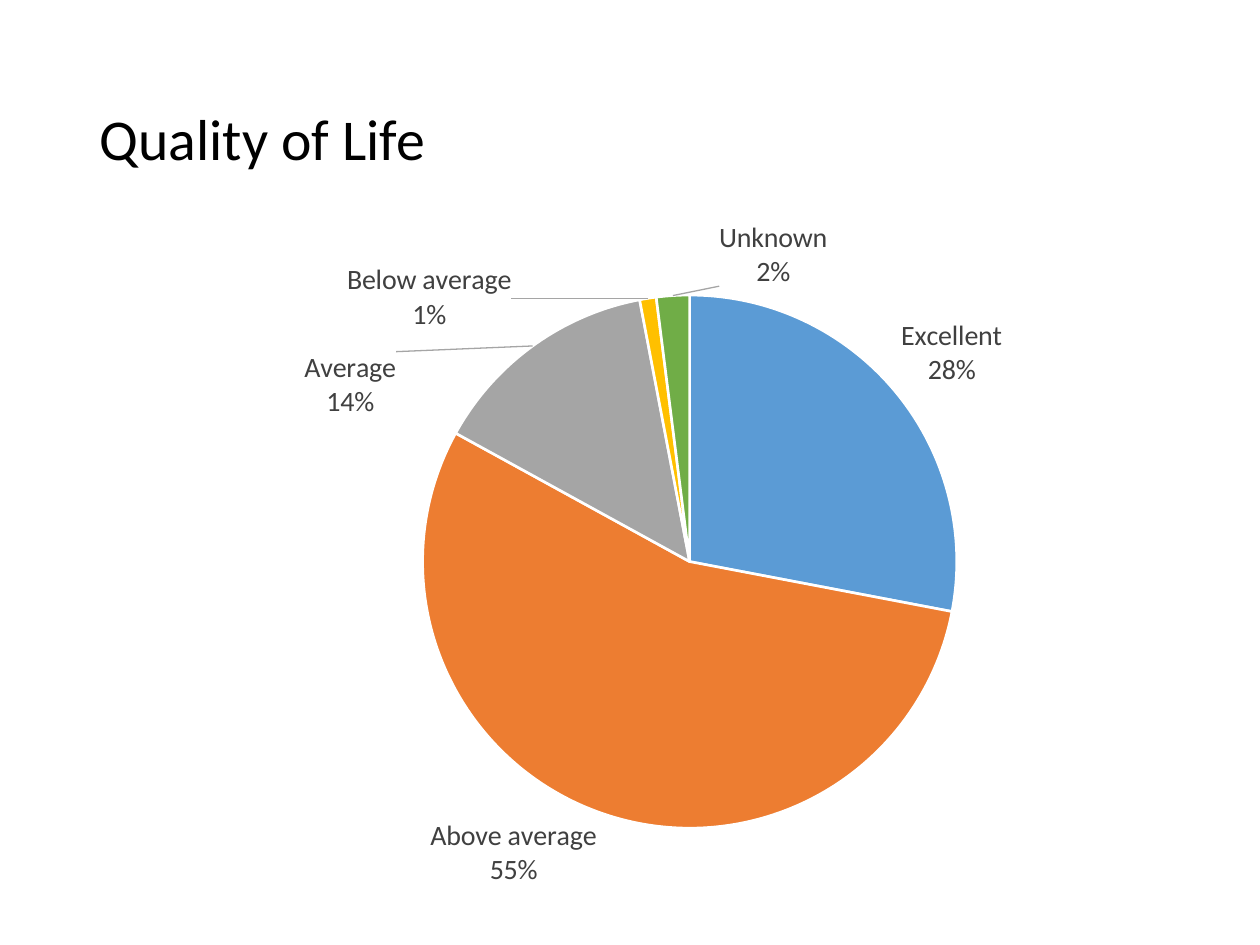
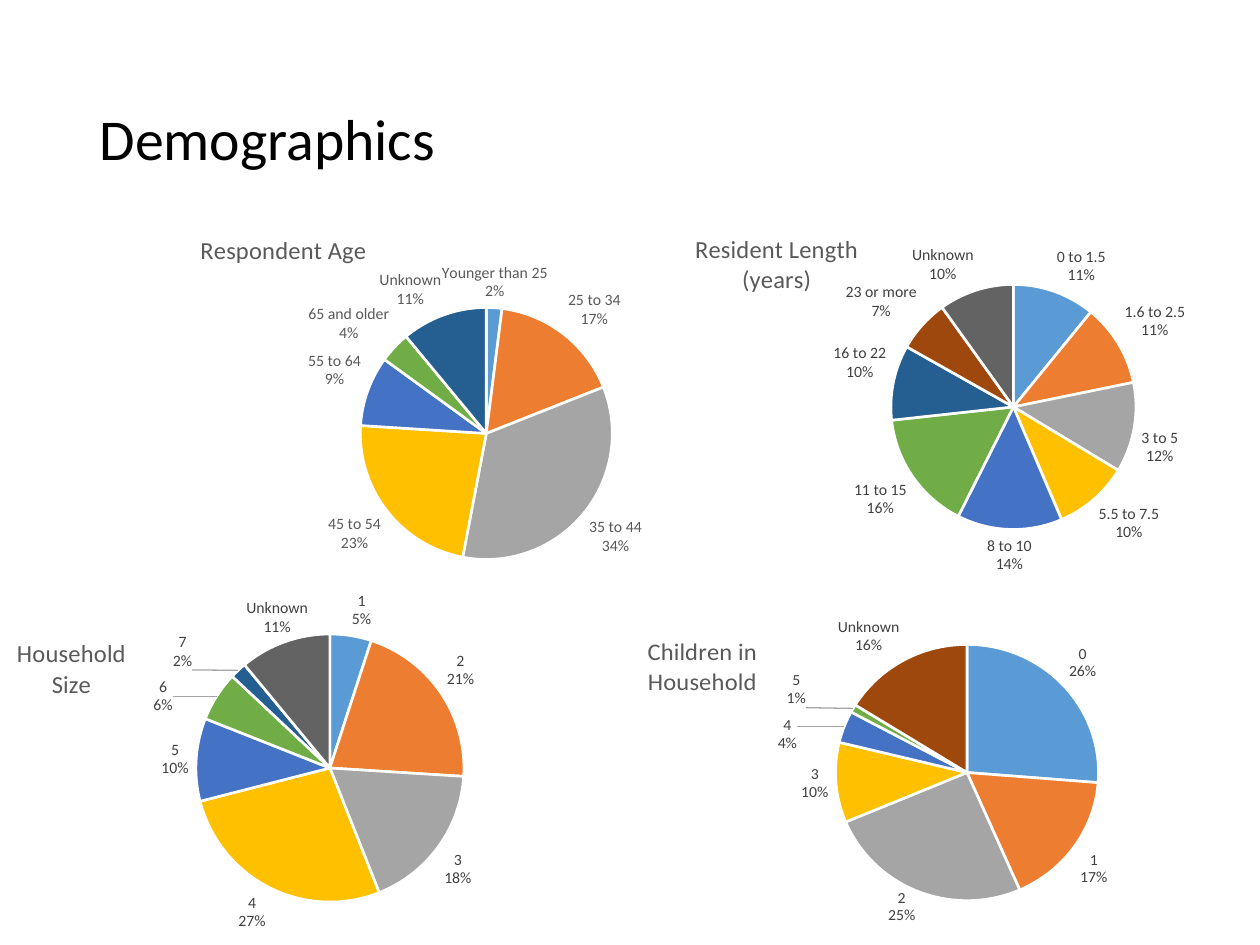
import copy

import pptx
import pptx.chart.data
import pptx.dml.color
import pptx.enum.chart
import pptx.enum.text
import pptx.oxml
import pptx.oxml.ns
import pptx.util
from lxml import etree

PX_PER_INCH = 126
SLIDE_SIZE = (1260, 945)
TITLE_BOX = (87, 50, 1086, 183)
FONT = "Calibri"

RGB = pptx.dml.color.RGBColor
BLACK = RGB(0x00, 0x00, 0x00)
WHITE = RGB(0xFF, 0xFF, 0xFF)
DARK_GREY = RGB(0x40, 0x40, 0x40)
MID_GREY = RGB(0x59, 0x59, 0x59)
LEADER_GREY = RGB(0xA5, 0xA5, 0xA5)
SLICES = [
    RGB(0x5B, 0x9B, 0xD5),
    RGB(0xED, 0x7D, 0x31),
    RGB(0xA5, 0xA5, 0xA5),
    RGB(0xFF, 0xC0, 0x00),
    RGB(0x44, 0x72, 0xC4),
    RGB(0x70, 0xAD, 0x47),
    RGB(0x25, 0x5E, 0x91),
    RGB(0x9E, 0x48, 0x0E),
    RGB(0x63, 0x63, 0x63),
]

# Boxes and heading positions are in px; a heading position and the label
# shifts are measured inside the chart box. A plot is a share of its box.
QUALITY = dict(
    box=(168, 220, 1018, 672),
    plot=(0.25, 0.11, 0.525, 0.795),
    shares={"Excellent": 28, "Above average": 55, "Average": 14,
            "Below average": 1, "Poor": 0, "Unknown": 2},
    shifts={2: (-132, 80), 3: (-135, 41), 4: (0, -3), 5: (101, -2)},
    label_size=16,
)
DEMOGRAPHICS = [
    dict(
        box=(126, 199, 630, 378),
        plot=(0.372, 0.287, 0.4, 0.667),
        shares={"Younger than 25": 2, "25 to 34": 17, "35 to 44": 34,
                "45 to 54": 23, "55 to 64": 9, "65 and older": 4,
                "Unknown": 11},
        heading=["Respondent Age"],
        heading_at=(70, 29),
        label_color=MID_GREY,
    ),
    dict(
        box=(661, 202, 630, 378),
        plot=(0.365, 0.218, 0.389, 0.649),
        shares={"0 to 1.5": 11, "1.6 to 2.5": 11, "3 to 5": 12,
                "5.5 to 7.5": 10, "8 to 10": 14, "11 to 15": 16,
                "16 to 22": 10, "23 or more": 7, "Unknown": 10},
        heading=["Resident Length", "(years)"],
        heading_at=(30, 26),
    ),
    dict(
        box=(-42, 583, 620, 357),
        plot=(0.375, 0.143, 0.45, 0.751),
        shares={"1": 5, "2": 21, "3": 18, "4": 27, "5": 10, "6": 6,
                "7": 2, "8": 0, "Unknown": 11},
        heading=["Household", "Size"],
        heading_at=(55, 50),
        shifts={5: (-38, 22), 6: (-41, 5), 7: (-11, -15), 8: (26, 1)},
    ),
    dict(
        box=(567, 577, 609, 357),
        plot=(0.436, 0.194, 0.442, 0.737),
        shares={"0": 26, "1": 17, "2": 25, "3": 10, "4": 4, "5": 1,
                "6": 0, "Unknown": 16},
        heading=["Children in", "Household"],
        heading_at=(77, 56),
        shifts={4: (-40, 29), 5: (-41, 3), 6: (-21, -27)},
    ),
]


def px(length):
    return pptx.util.Emu(round(length * 914400 / PX_PER_INCH))


def style_font(font, size, color):
    font.name = FONT
    font.size = pptx.util.Pt(size)
    font.bold = False
    font.color.rgb = color


def chart_xml(tag, content="", attributes=""):
    return pptx.oxml.parse_xml(
        f'<c:{tag} {pptx.oxml.ns.nsdecls("c", "a")} {attributes}>'
        f"{content}</c:{tag}>"
    )


def manual_layout(x, y, size=None):
    """Layout in shares of the chart box; with a size it fixes the inner plot."""
    parts = []
    if size:
        parts.append('<c:layoutTarget val="inner"/>')
    if size is not None:
        parts.append('<c:xMode val="edge"/><c:yMode val="edge"/>')
    parts.append(f'<c:x val="{x:.3f}"/><c:y val="{y:.3f}"/>')
    if size:
        parts.append(f'<c:w val="{size[0]}"/><c:h val="{size[1]}"/>')
    return chart_xml("layout", f'<c:manualLayout>{"".join(parts)}</c:manualLayout>')


def replace_layout(parent, layout, index):
    for old in parent.findall(pptx.oxml.ns.qn("c:layout")):
        parent.remove(old)
    parent.insert(index, layout)


def add_heading(chart, lines, x, y):
    heading = chart.chart_title
    frame = heading.text_frame
    for number, line in enumerate(lines):
        paragraph = frame.add_paragraph() if number else frame.paragraphs[0]
        paragraph.alignment = pptx.enum.text.PP_ALIGN.CENTER
        run = paragraph.add_run()
        run.text = line
        style_font(run.font, 14, MID_GREY)
    title = chart.element.find(".//" + pptx.oxml.ns.qn("c:title"))
    replace_layout(title, manual_layout(x, y, ()), 1)
    overlay = title.find(pptx.oxml.ns.qn("c:overlay"))
    if overlay is None:
        title[1].addnext(chart_xml("overlay", attributes='val="1"'))
    else:
        overlay.set("val", "1")


def add_slice_labels(series, size, color, shifts):
    """Category and percent outside each slice; shifts move single labels."""
    labels = series.data_labels
    style_font(labels.font, size, color)
    labels.number_format = "0%"
    labels.number_format_is_linked = False
    labels.position = pptx.enum.chart.XL_LABEL_POSITION.OUTSIDE_END
    labels.show_value = False
    labels.show_category_name = True
    labels.show_percentage = True

    qn = pptx.oxml.ns.qn
    root = series.element.find(qn("c:dLbls")) if hasattr(series, "element") \
        else series._element.find(qn("c:dLbls"))
    for old in root.findall(qn("c:showLeaderLines")):
        root.remove(old)
    separator = etree.SubElement(root, qn("c:separator"))
    separator.text = "\n"
    shared = list(root)
    for position, (index, (x, y)) in enumerate(shifts.items()):
        label = chart_xml("dLbl", f'<c:idx val="{index}"/>')
        label.append(manual_layout(x, y))
        for part in shared:
            label.append(copy.deepcopy(part))
        root.insert(position, label)
    root.append(chart_xml("showLeaderLines", attributes='val="1"'))
    root.append(chart_xml(
        "leaderLines",
        '<c:spPr><a:ln w="9525"><a:solidFill>'
        f'<a:srgbClr val="{LEADER_GREY}"/></a:solidFill></a:ln></c:spPr>',
    ))


def add_pie(slide, box, plot, shares, heading=None, heading_at=(0, 0),
            shifts=None, label_size=9, label_color=DARK_GREY):
    left, top, width, height = box
    data = pptx.chart.data.CategoryChartData()
    data.categories = list(shares)
    data.add_series("Series 1", list(shares.values()))
    chart = slide.shapes.add_chart(
        pptx.enum.chart.XL_CHART_TYPE.PIE, *map(px, box), data
    ).chart
    chart.has_legend = False
    chart.has_title = heading is not None
    style_font(chart.font, 10, BLACK)
    if heading:
        add_heading(chart, heading, heading_at[0] / width, heading_at[1] / height)

    pie = chart.plots[0]
    pie.vary_by_categories = True
    series = pie.series[0]
    for index, color in enumerate(SLICES[:len(shares)]):
        look = series.points[index].format
        look.fill.solid()
        look.fill.fore_color.rgb = color
        look.line.color.rgb = WHITE
        look.line.width = pptx.util.Pt(1.5)
    add_slice_labels(
        series, label_size, label_color,
        {index: (x / width, y / height) for index, (x, y) in (shifts or {}).items()},
    )
    area = chart.element.find(".//" + pptx.oxml.ns.qn("c:plotArea"))
    replace_layout(area, manual_layout(*plot[:2], plot[2:]), 0)


def add_titled_slide(deck, text):
    slide = deck.slides.add_slide(deck.slide_layouts[5])
    title = slide.shapes.title
    title.left, title.top, title.width, title.height = map(px, TITLE_BOX)
    title.text_frame.vertical_anchor = pptx.enum.text.MSO_ANCHOR.MIDDLE
    paragraph = title.text_frame.paragraphs[0]
    paragraph.alignment = pptx.enum.text.PP_ALIGN.LEFT
    paragraph.line_spacing = 0.9
    run = paragraph.add_run()
    run.text = text
    style_font(run.font, 33, BLACK)
    return slide


def main():
    deck = pptx.Presentation()
    deck.slide_width, deck.slide_height = map(px, SLIDE_SIZE)
    add_pie(add_titled_slide(deck, "Quality of Life"), **QUALITY)
    demographics = add_titled_slide(deck, "Demographics")
    for pie in DEMOGRAPHICS:
        add_pie(demographics, **pie)
    deck.save("out.pptx")


if __name__ == "__main__":
    main()
